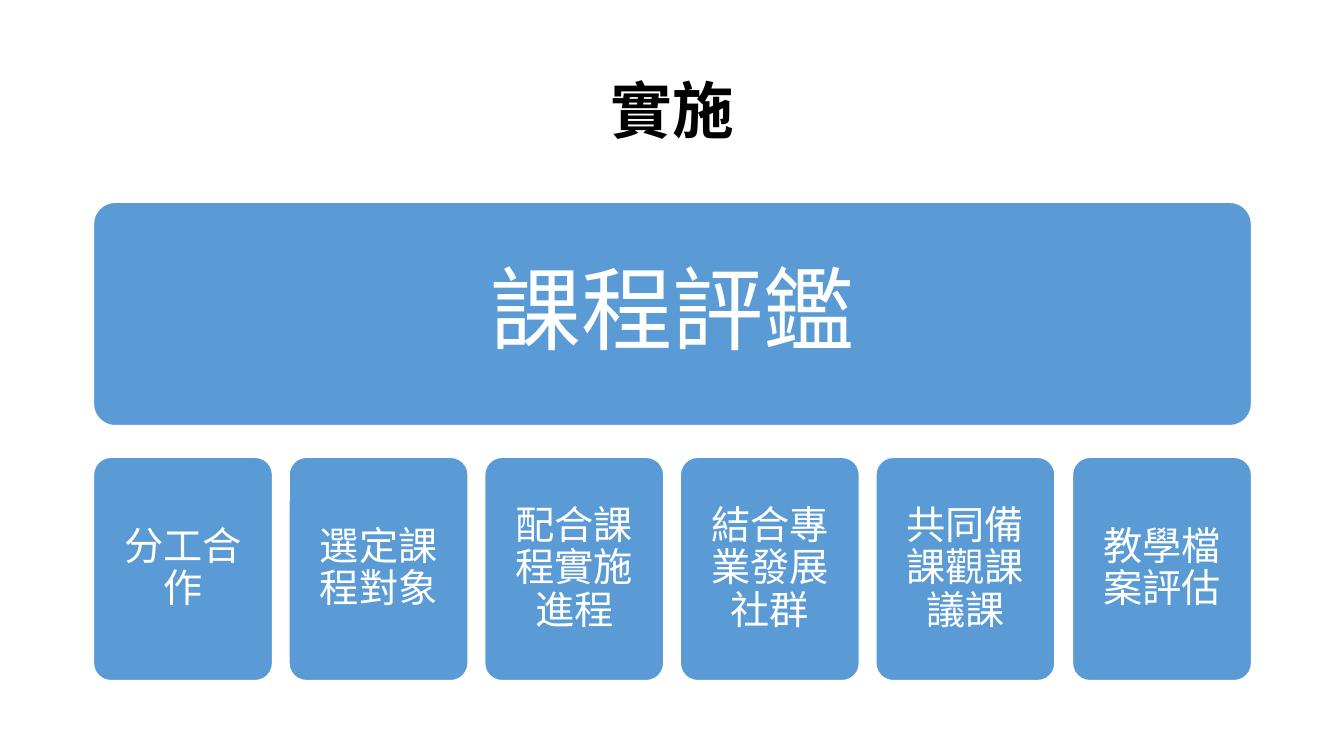
import pptx
import pptx.util
import pptx.dml.color
import pptx.enum.shapes
import pptx.enum.text

PX = 9144
THEME = {
    "font": "Cabin",
    "ink": pptx.dml.color.RGBColor.from_string("000000"),
    "paper": pptx.dml.color.RGBColor.from_string("FFFFFF"),
    "tile": pptx.dml.color.RGBColor.from_string("5B9BD5"),
    "title_size": 44,
    "topic_size": 65,
    "step_size": 28,
}


def write(frame, wording, size, colour, bold=False):
    frame.word_wrap = True
    frame.vertical_anchor = pptx.enum.text.MSO_ANCHOR.MIDDLE
    paragraph = frame.paragraphs[0]
    paragraph.alignment = pptx.enum.text.PP_ALIGN.CENTER
    paragraph.line_spacing = 0.9
    run = paragraph.add_run()
    run.text = wording
    run.font.name = THEME["font"]
    run.font.size = pptx.util.Pt(size)
    run.font.color.rgb = colour
    run.font.bold = bold


def add_tile(slide, left, top, width, height, inset, wording, size):
    tile = slide.shapes.add_shape(
        pptx.enum.shapes.MSO_SHAPE.ROUNDED_RECTANGLE,
        left * PX, top * PX, width * PX, height * PX,
    )
    tile.adjustments[0] = 0.1
    tile.shadow.inherit = False
    tile.fill.solid()
    tile.fill.fore_color.rgb = THEME["tile"]
    tile.line.color.rgb = THEME["paper"]
    tile.line.width = pptx.util.Pt(2)
    frame = tile.text_frame
    frame.margin_left = frame.margin_right = inset * PX
    frame.margin_top = frame.margin_bottom = inset * PX
    write(frame, wording, size, THEME["paper"])


deck = pptx.Presentation()
deck.slide_width = 1333 * PX
deck.slide_height = 750 * PX
slide = deck.slides.add_slide(deck.slide_layouts[6])

left, content_width, tile_height = 92, 1150, 223

title = slide.shapes.add_textbox(left * PX, 40 * PX, content_width * PX, 145 * PX)
write(title.text_frame, "實施", THEME["title_size"], THEME["ink"], bold=True)

add_tile(slide, left, 200, content_width, tile_height, 27, "課程評鑑", THEME["topic_size"])

steps = [
    "分工合作",
    "選定課程對象",
    "配合課程實施進程",
    "結合專業發展社群",
    "共同備課觀課議課",
    "教學檔案評估",
]
step_width = 179
for index, step in enumerate(steps):
    offset = index * (content_width - step_width) // (len(steps) - 1)
    add_tile(slide, left + offset, 453, step_width, tile_height, 12, step, THEME["step_size"])

deck.save("out.pptx")
